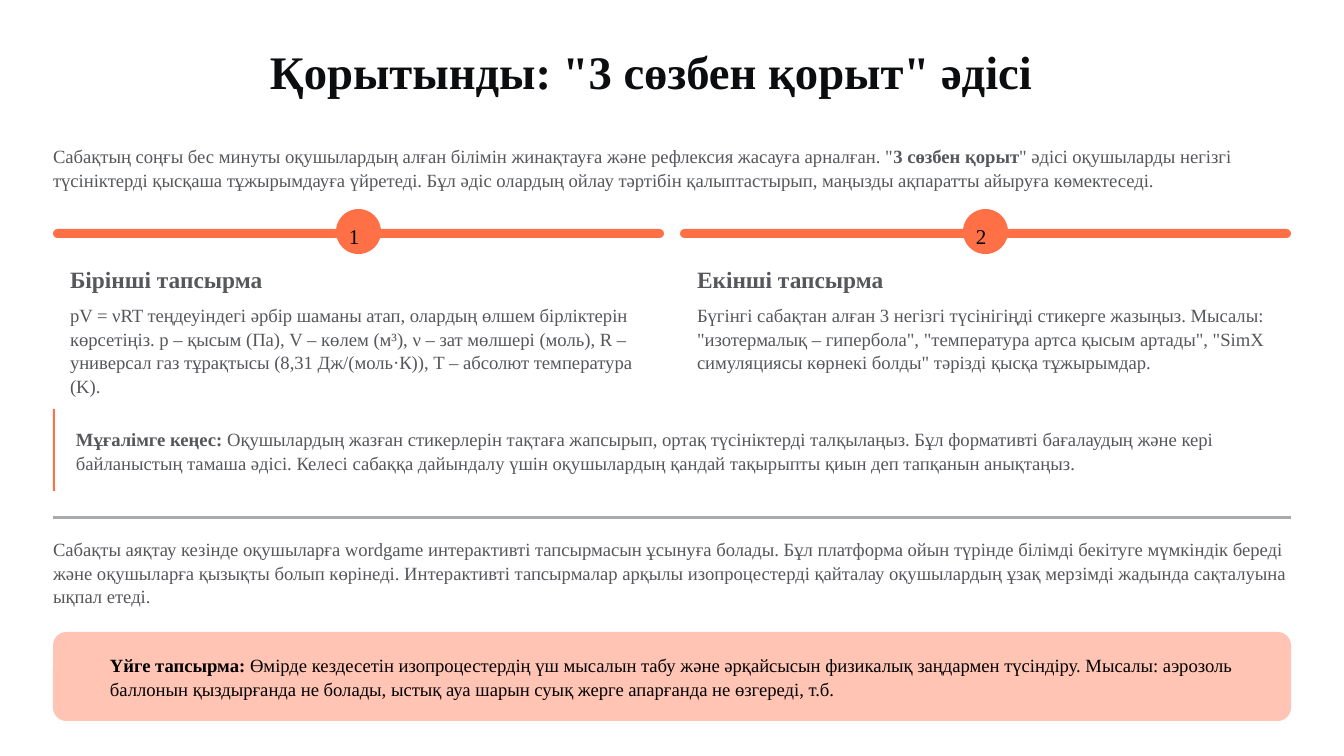
import pptx
import pptx.dml.color
import pptx.enum.shapes
import pptx.enum.text
import pptx.oxml.ns
import pptx.util
from lxml import etree

RGBColor = pptx.dml.color.RGBColor
SHAPE = pptx.enum.shapes.MSO_SHAPE

INK = RGBColor(0x0C, 0x0D, 0x0F)
GRAY = RGBColor(0x55, 0x57, 0x5A)
BLACK = RGBColor(0, 0, 0)
WHITE = RGBColor(0xFF, 0xFF, 0xFF)
ORANGE = RGBColor(0xFF, 0x70, 0x47)
PEACH = RGBColor(0xFF, 0xC4, 0xB3)

LEFT, WIDTH = 53, 1238
CARD_WIDTH, CARD_GAP = 611, 16
CARD_TEXT_WIDTH = 577
BADGE = 45

TASKS = [
    ("Бірінші тапсырма",
     "pV = νRT теңдеуіндегі әрбір шаманы атап, олардың өлшем бірліктерін көрсетіңіз. "
     "p – қысым (Па), V – көлем (м³), ν – зат мөлшері (моль), R – универсал газ тұрақтысы "
     "(8,31 Дж/(моль·К)), T – абсолют температура (K)."),
    ("Екінші тапсырма",
     "Бүгінгі сабақтан алған 3 негізгі түсінігіңді стикерге жазыңыз. Мысалы: "
     "\"изотермалық – гипербола\", \"температура артса қысым артады\", "
     "\"SimX симуляциясы көрнекі болды\" тәрізді қысқа тұжырымдар."),
]


def px(length):
    return pptx.util.Emu(round(length * 914400 / 84))


class SlideBuilder:
    font = "Times New Roman"

    def __init__(self, deck):
        self.page = deck.slides.add_slide(deck.slide_layouts[6])

    def block(self, left, top, width, height, fill, rounding=None, opacity=None):
        """Add a filled rectangle; rounding is the corner share of the short side."""
        kind = SHAPE.RECTANGLE if rounding is None else SHAPE.ROUNDED_RECTANGLE
        shape = self.page.shapes.add_shape(kind, px(left), px(top), px(width), px(height))
        shape.shadow.inherit = False
        shape.line.fill.background()
        shape.fill.solid()
        shape.fill.fore_color.rgb = fill
        if rounding is not None:
            shape.adjustments[0] = rounding
        if opacity is not None:
            color = shape.fill._xPr.find(".//" + pptx.oxml.ns.qn("a:srgbClr"))
            alpha = etree.SubElement(color, pptx.oxml.ns.qn("a:alpha"))
            alpha.set("val", str(opacity * 1000))

    def text(self, left, top, width, height, *parts, size=16, color=GRAY, spacing=20.5):
        """Add one paragraph; each part is a string or a (string, bold) pair."""
        box = self.page.shapes.add_textbox(px(left), px(top), px(width), px(height))
        frame = box.text_frame
        frame.word_wrap = True
        frame.vertical_anchor = pptx.enum.text.MSO_ANCHOR.TOP
        frame.margin_left = frame.margin_top = frame.margin_right = frame.margin_bottom = 0
        para = frame.paragraphs[0]
        para.line_spacing = pptx.util.Pt(spacing)
        for part in parts:
            words, bold = (part, False) if isinstance(part, str) else part
            span = para.add_run()
            span.text = words
            span.font.name = self.font
            span.font.size = pptx.util.Pt(size)
            span.font.bold = bold
            span.font.color.rgb = color

    def task(self, number, left, heading, body):
        badge_left = left + (CARD_WIDTH - BADGE) // 2
        self.block(left, 232, CARD_WIDTH, 160, WHITE, rounding=0.06)
        self.block(left, 229, CARD_WIDTH, 9, ORANGE, rounding=0.5)
        self.block(badge_left, 209, BADGE, BADGE, ORANGE, rounding=0.5)
        self.text(badge_left + 13, 220, 18, 23, str(number), size=18, color=BLACK,
                  spacing=24.5)
        self.text(left + 17, 270, CARD_TEXT_WIDTH, 24, (heading, True), size=20, spacing=20)
        self.text(left + 17, 302, CARD_TEXT_WIDTH, 73, body)


def main():
    deck = pptx.Presentation()
    deck.slide_width, deck.slide_height = px(1344), px(756)
    slide = SlideBuilder(deck)

    slide.text(270, 52, 804, 47, ("Қорытынды: \"3 сөзбен қорыт\" әдісі", True),
               size=40, color=INK, spacing=40.5)
    slide.text(LEFT, 143, WIDTH, 49,
               "Сабақтың соңғы бес минуты оқушылардың алған білімін жинақтауға және "
               "рефлексия жасауға арналған. \"",
               ("3 сөзбен қорыт", True),
               "\" әдісі оқушыларды негізгі түсініктерді қысқаша тұжырымдауға үйретеді. "
               "Бұл әдіс олардың ойлау тәртібін қалыптастырып, маңызды ақпаратты айыруға "
               "көмектеседі.")

    for index, (heading, body) in enumerate(TASKS):
        slide.task(index + 1, LEFT + index * (CARD_WIDTH + CARD_GAP), heading, body)

    slide.text(76, 426, 1215, 49, ("Мұғалімге кеңес:", True),
               " Оқушылардың жазған стикерлерін тақтаға жапсырып, ортақ түсініктерді "
               "талқылаңыз. Бұл формативті бағалаудың және кері байланыстың тамаша әдісі. "
               "Келесі сабаққа дайындалу үшін оқушылардың қандай тақырыпты қиын деп "
               "тапқанын анықтаңыз.")
    slide.block(LEFT, 409, 2, 82, ORANGE)
    slide.block(LEFT, 516, WIDTH, 3, GRAY, opacity=50)

    slide.text(LEFT, 536, WIDTH, 49,
               "Сабақты аяқтау кезінде оқушыларға wordgame интерактивті тапсырмасын ұсынуға "
               "болады. Бұл платформа ойын түрінде білімді бекітуге мүмкіндік береді және "
               "оқушыларға қызықты болып көрінеді. Интерактивті тапсырмалар арқылы "
               "изопроцестерді қайталау оқушылардың ұзақ мерзімді жадында сақталуына "
               "ықпал етеді.")
    slide.block(LEFT, 632, WIDTH, 89, PEACH, rounding=0.15)
    slide.text(110, 652, 1173, 49, ("Үйге тапсырма:", True),
               " Өмірде кездесетін изопроцестердің үш мысалын табу және әрқайсысын "
               "физикалық заңдармен түсіндіру. Мысалы: аэрозоль баллонын қыздырғанда не "
               "болады, ыстық ауа шарын суық жерге апарғанда не өзгереді, т.б.",
               color=BLACK)

    deck.save("out.pptx")


if __name__ == "__main__":
    main()
